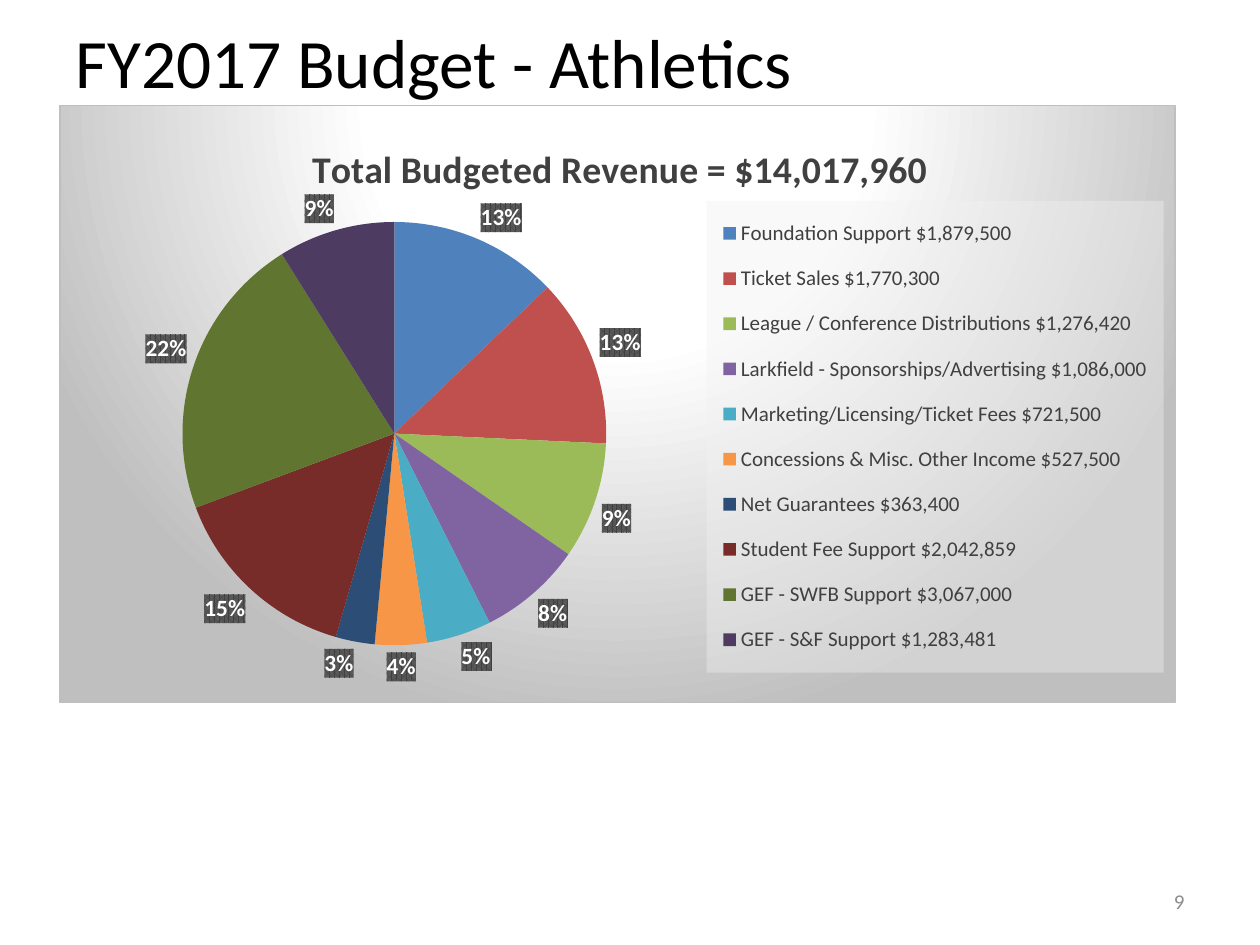
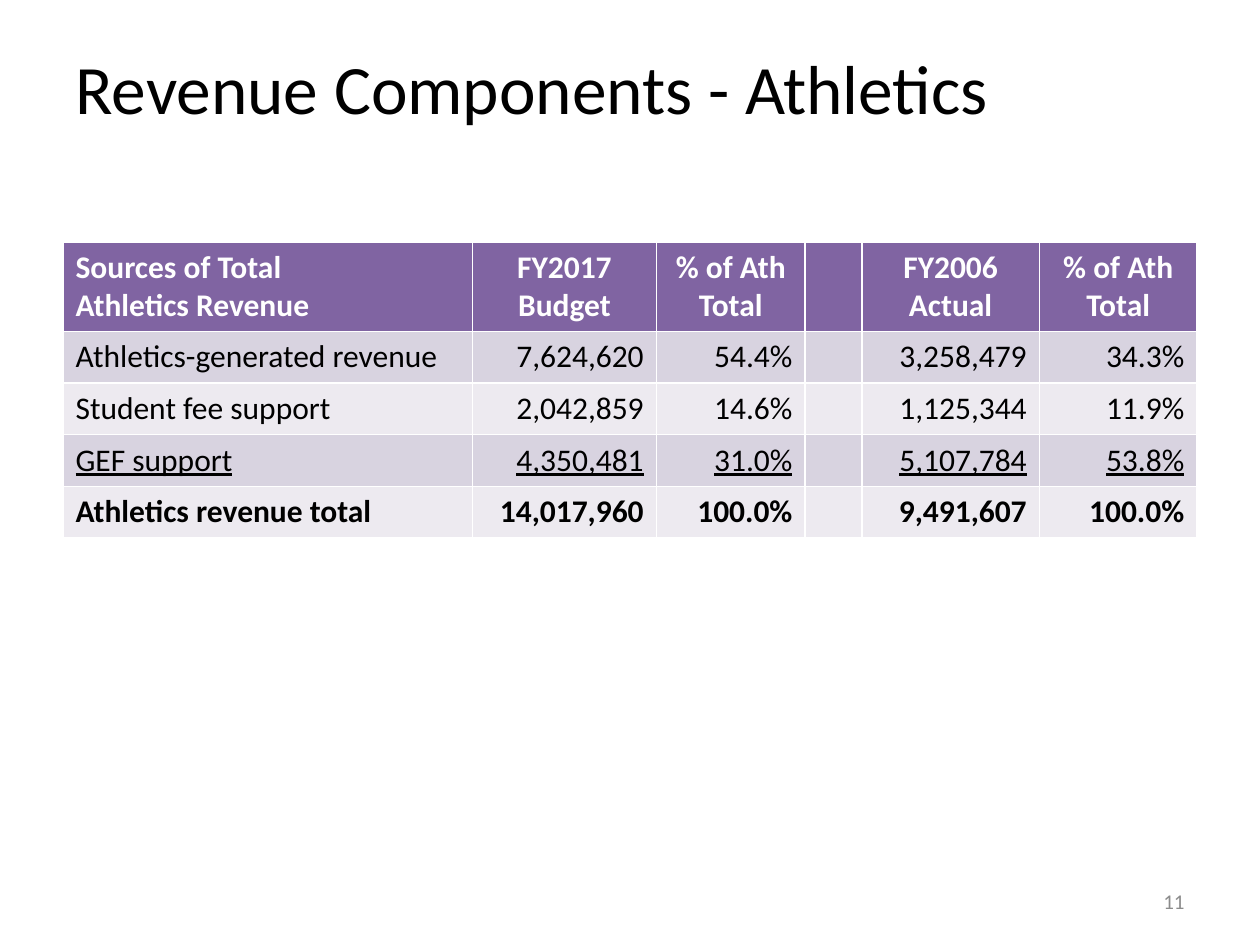
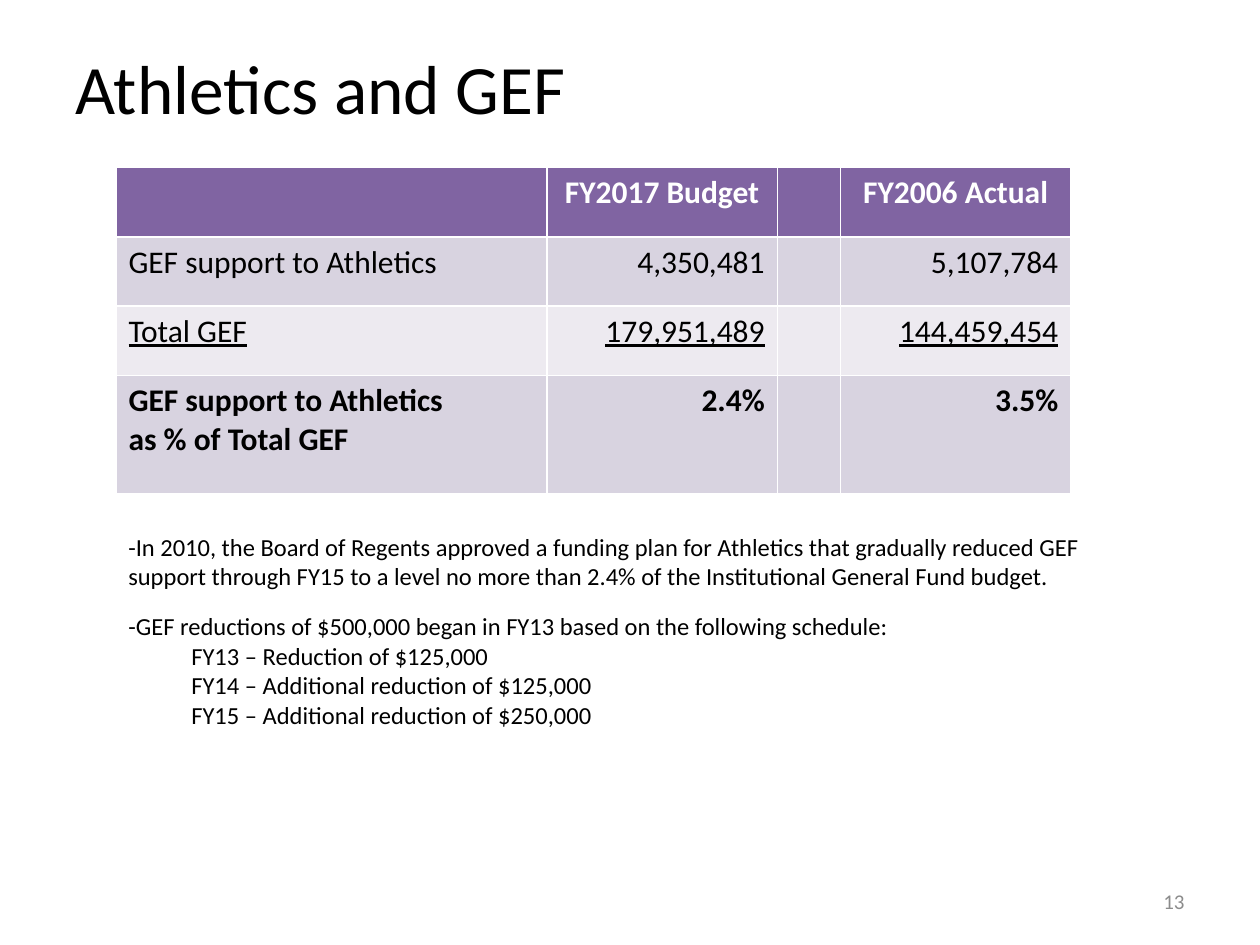
from pptx import Presentation
from pptx.chart.data import CategoryChartData as ChartData
from pptx.dml.color import RGBColor as Rgb
from pptx.enum.chart import XL_CHART_TYPE as Kind, XL_LABEL_POSITION as Spot
from pptx.enum.chart import XL_LEGEND_POSITION as Side
from pptx.enum.text import MSO_ANCHOR as Anchor, MSO_AUTO_SIZE as Fit, PP_ALIGN as Align
from pptx.oxml import parse_xml
from pptx.oxml.ns import nsdecls, qn
from pptx.util import Inches, Pt

WIDE, HIGH = Inches(10), Inches(7.5)
FACE = "Calibri"
HEX = {"ink": "000000", "paper": "FFFFFF", "page": "8C8C8C", "head": "8064A2",
       "odd": "D8D3E0", "even": "EDEAF0", "text": "404040", "edge": "BFBFBF",
       "weave": "595959", "key": "F2F2F2"}
SLICES = ["4F81BD", "C0504D", "9BBB59", "8064A2", "4BACC6",
          "F79646", "2C4D75", "772C2A", "5F7530", "4D3B62"]

# Text formats
TITLE = {"size": Pt(39.6)}
PAGE = {"size": Pt(12), "color": "page"}
CELL = {"size": Pt(18)}
HEAD = {**CELL, "color": "paper", "bold": True}
UNDER = {**CELL, "underline": True}
TOTAL = {**CELL, "bold": True}
NOTE = {"size": Pt(14)}

# Content
REVENUE = [
    ("Foundation Support $1,879,500", 13),
    ("Ticket Sales $1,770,300", 13),
    ("League / Conference Distributions $1,276,420", 9),
    ("Larkfield - Sponsorships/Advertising $1,086,000", 8),
    ("Marketing/Licensing/Ticket Fees $721,500", 5),
    ("Concessions & Misc. Other Income $527,500", 4),
    ("Net Guarantees $363,400", 3),
    ("Student Fee Support $2,042,859", 15),
    ("GEF - SWFB Support $3,067,000", 22),
    ("GEF - S&F Support $1,283,481", 9),
]
SOURCES = [
    (HEAD, ["Sources of Total\nAthletics Revenue", "FY2017 Budget", "% of Ath Total",
            "", "FY2006 Actual", "% of Ath Total"]),
    (CELL, ["Athletics-generated revenue", "7,624,620", "54.4%", "", "3,258,479", "34.3%"]),
    (CELL, ["Student fee support", "2,042,859", "14.6%", "", "1,125,344", "11.9%"]),
    (UNDER, ["GEF support", "4,350,481", "31.0%", "", "5,107,784", "53.8%"]),
    (TOTAL, ["Athletics revenue total", "14,017,960", "100.0%", "", "9,491,607", "100.0%"]),
]
SUPPORT = [
    (HEAD, ["", "FY2017 Budget", "", "FY2006 Actual"]),
    (CELL, ["GEF support to Athletics", "4,350,481", "", "5,107,784"]),
    (UNDER, ["Total GEF", "179,951,489", "", "144,459,454"]),
    (TOTAL, ["GEF support to Athletics\nas % of Total GEF", "2.4%", "", "3.5%"]),
]
# Each note: text, space before in points, indent in inches
NOTES = [
    ("-In 2010, the Board of Regents approved a funding plan for Athletics that gradually "
     "reduced GEF support through FY15 to a level no more than 2.4% of the Institutional "
     "General Fund budget.", 0, 0),
    ("-GEF reductions of $500,000 began in FY13 based on the following schedule:", 12, 0),
    ("FY13 – Reduction of $125,000", 0, 0.5),
    ("FY14 – Additional reduction of $125,000", 0, 0.5),
    ("FY15 – Additional reduction of $250,000", 0, 0.5),
]


def area(left, top, width, height):
    """Turn percentages of the slide into lengths."""
    return [int(side * share / 100)
            for side, share in zip((WIDE, HIGH, WIDE, HIGH), (left, top, width, height))]


def style(font, color="ink", **form):
    font.name = FACE
    font.color.rgb = Rgb.from_string(HEX[color])
    for name, value in form.items():
        setattr(font, name, value)


def add_slide(deck, title, page, rise=10.4):
    """Add a slide with its title and page number."""
    slide = deck.slides.add_slide(deck.slide_layouts[5])
    head = slide.shapes.title
    head.left, head.top, head.width, head.height = area(5, 4, 90, rise)
    fill_box(head.text_frame, title, TITLE, Align.LEFT)
    foot = slide.shapes.add_textbox(*area(71.7, 92.67, 23.3, 5.33))
    fill_box(foot.text_frame, str(page), PAGE, Align.RIGHT)
    return slide


def fill_box(frame, text, form, align):
    frame.text = text
    frame.word_wrap = True
    frame.auto_size = Fit.NONE
    frame.vertical_anchor = Anchor.MIDDLE
    frame.paragraphs[0].alignment = align
    style(frame.paragraphs[0].font, **form)


def add_grid(slide, spot, rows, cols, tall, anchor):
    """Add a banded table; cols and tall are in inches."""
    grid = slide.shapes.add_table(len(rows), len(cols), *area(*spot)).table
    for col, width in zip(grid.columns, cols):
        col.width = Inches(width)
    for r, (form, texts) in enumerate(rows):
        grid.rows[r].height = Inches(tall[r])
        band = "head" if r == 0 else "odd" if r % 2 else "even"
        for c, text in enumerate(texts):
            cell = grid.cell(r, c)
            cell.text = text
            cell.vertical_anchor = Anchor.TOP if r else anchor
            cell.fill.solid()
            cell.fill.fore_color.rgb = Rgb.from_string(HEX[band])
            for para in cell.text_frame.paragraphs:
                para.alignment = (Align.LEFT if c == 0 else
                                  Align.RIGHT if r else Align.CENTER)
                style(para.font, **form)


def paint(body):
    """Make a chart shape format from its fill and line."""
    return parse_xml(f'<c:spPr {nsdecls("c", "a")}>{body}</c:spPr>')


def tint(name, extra=""):
    return f'<a:srgbClr val="{HEX[name]}">{extra}</a:srgbClr>'


def place(host, index, inner=False, **spot):
    """Give a chart part a fixed place, in shares of the chart."""
    old = host.find(qn("c:layout"))
    if old is not None:
        host.remove(old)
    parts = '<c:layoutTarget val="inner"/>' if inner else ""
    parts += "".join(f'<c:{key}Mode val="edge"/>' for key in "xy")
    parts += "".join(f'<c:{key} val="{value}"/>' for key, value in spot.items())
    host.insert(index, parse_xml(f'<c:layout {nsdecls("c")}><c:manualLayout>{parts}'
                                 '</c:manualLayout></c:layout>'))


def add_pie(slide, spot, title, pairs):
    data = ChartData()
    data.categories = [name for name, _ in pairs]
    data.add_series("Series 1", [value for _, value in pairs])
    chart = slide.shapes.add_chart(Kind.PIE, *area(*spot), data).chart
    style(chart.font, size=Pt(10))
    root = chart._chartSpace

    # Heading
    chart.has_title = True
    frame = chart.chart_title.text_frame
    frame.text = title
    style(frame.paragraphs[0].runs[0].font, "text", size=Pt(21.6), bold=True)
    place(root.xpath("c:chart/c:title")[0], 1, x=0.22, y=0.05)

    # Slices and their labels
    plot = chart.plots[0]
    plot.vary_by_categories = True
    for i, color in enumerate(SLICES):
        fill = plot.series[0].points[i].format.fill
        fill.solid()
        fill.fore_color.rgb = Rgb.from_string(color)
    place(root.xpath("c:chart/c:plotArea")[0], 0, True, x=0.11, y=0.19, w=0.38, h=0.72)
    plot.has_data_labels = True
    label = plot.data_labels
    form = {"show_percentage": True, "show_value": False, "number_format": "0%",
            "number_format_is_linked": False, "position": Spot.OUTSIDE_END}
    for name, value in form.items():
        setattr(label, name, value)
    style(label.font, "paper", size=Pt(13.3), bold=True)
    root.xpath(".//c:dLbls/c:txPr")[0].addprevious(paint(
        f'<a:pattFill prst="pct75"><a:fgClr>{tint("text")}</a:fgClr>'
        f'<a:bgClr>{tint("weave")}</a:bgClr></a:pattFill>'))

    # Legend
    chart.has_legend = True
    chart.legend.position = Side.RIGHT
    chart.legend.include_in_layout = False
    style(chart.legend.font, "text", size=Pt(12))
    key = root.xpath("c:chart/c:legend")[0]
    place(key, 1, x=0.58, y=0.16, w=0.41, h=0.79)
    clear = tint("key", '<a:alpha val="39000"/>')
    key.find(qn("c:txPr")).addprevious(paint(f"<a:solidFill>{clear}</a:solidFill>"))

    # Backdrop
    stops = "".join(f'<a:gs pos="{at * 1000}">{tint(name)}</a:gs>'
                    for at, name in ((0, "paper"), (39, "paper"), (100, "edge")))
    root.find(qn("c:chart")).addnext(paint(
        f'<a:gradFill><a:gsLst>{stops}</a:gsLst><a:path path="circle">'
        '<a:fillToRect l="50000" t="-80000" r="50000" b="180000"/></a:path></a:gradFill>'
        f'<a:ln w="9525"><a:solidFill>{tint("edge")}</a:solidFill></a:ln>'))


def add_notes(slide, spot, notes):
    frame = slide.shapes.add_textbox(*area(*spot)).text_frame
    frame.word_wrap = True
    for i, (text, gap, indent) in enumerate(notes):
        para = frame.add_paragraph() if i else frame.paragraphs[0]
        para.text = text
        if gap:
            para.space_before = Pt(gap)
        if indent:
            para._p.get_or_add_pPr().set("marL", str(Inches(indent)))
        style(para.font, **NOTE)


def main():
    deck = Presentation()
    deck.slide_width, deck.slide_height = WIDE, HIGH

    slide = add_slide(deck, "FY2017 Budget - Athletics", 9, rise=4.93)
    add_pie(slide, (4.7, 11.07, 88.6, 63.33),
            "Total Budgeted Revenue = $14,017,960", REVENUE)

    slide = add_slide(deck, "Revenue Components - Athletics", 11)
    add_grid(slide, (5, 25.6, 90, 31), SOURCES, [3.25, 1.46, 1.18, 0.45, 1.41, 1.25],
             [0.7] + [0.41] * 4, Anchor.BOTTOM)

    slide = add_slide(deck, "Athletics and GEF", 13)
    add_grid(slide, (9.2, 17.73, 75.8, 34.4), SUPPORT, [3.42, 1.83, 0.5, 1.83],
             [0.55] * 3 + [0.94], Anchor.TOP)
    add_notes(slide, (9.2, 55.6, 81.7, 30.53), NOTES)

    deck.save("out.pptx")


if __name__ == "__main__":
    main()
